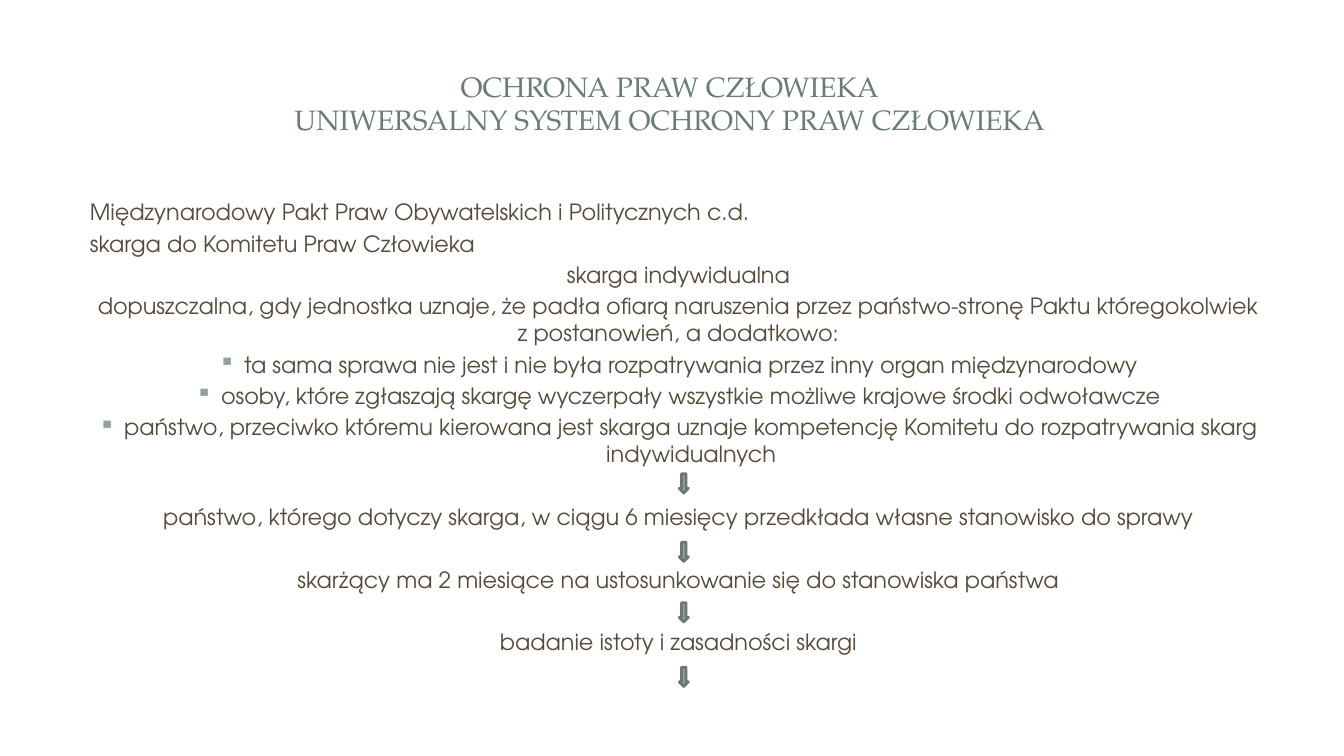
from dataclasses import dataclass

from lxml.etree import SubElement
from pptx import Presentation
from pptx.dml.color import RGBColor
from pptx.enum.shapes import MSO_SHAPE as Preset
from pptx.enum.text import MSO_ANCHOR as Anchor, PP_ALIGN as Align
from pptx.oxml.ns import qn
from pptx.util import Pt


@dataclass(frozen=True)
class Theme:
    heading: RGBColor = RGBColor.from_string("6B7D72")
    text: RGBColor = RGBColor.from_string("564B3C")
    accent: RGBColor = RGBColor.from_string("93A299")
    outline: RGBColor = RGBColor.from_string("6D7871")
    heading_font: str = "TeX Gyre Pagella"
    text_font: str = "TeX Gyre Adventor"
    heading_size: float = 20
    text_size: float = 16
    gap: float = 3.2  # a fifth of the text size
    step_gap: float = 25.6  # leaves a line free for an arrow


THEME = Theme()

HEADING = "OCHRONA PRAW CZŁOWIEKA\vUNIWERSALNY SYSTEM OCHRONY PRAW CZŁOWIEKA"
INTRO = [
    "Międzynarodowy Pakt Praw Obywatelskich i Politycznych c.d.",
    "skarga do Komitetu Praw Człowieka",
]
COMPLAINT = [
    "skarga indywidualna",
    "dopuszczalna, gdy jednostka uznaje, że padła ofiarą naruszenia przez "
    "państwo-stronę Paktu któregokolwiek z postanowień, a dodatkowo:",
]
CONDITIONS = [
    "ta sama sprawa nie jest i nie była rozpatrywania przez inny organ międzynarodowy",
    "osoby, które zgłaszają skargę wyczerpały wszystkie możliwe krajowe środki odwoławcze",
    "państwo, przeciwko któremu kierowana jest skarga uznaje kompetencję Komitetu "
    "do rozpatrywania skarg indywidualnych",
]
STEPS = [
    "państwo, którego dotyczy skarga, w ciągu 6 miesięcy przedkłada własne stanowisko do sprawy",
    "skarżący ma 2 miesiące na ustosunkowanie się do stanowiska państwa",
    "badanie istoty i zasadności skargi",
]
ARROW_OFFSETS = [200.2, 249.1, 292.3, 338.4]  # below the top of the procedure


def add_frame(slide, box):
    frame = slide.shapes.add_textbox(*map(Pt, box)).text_frame
    frame.word_wrap = True
    return frame


def style(paragraph, font_name, size, color):
    for run in paragraph.runs:
        run.font.name = font_name
        run.font.size = Pt(size)
        run.font.color.rgb = color


def indent(paragraph, left, first=0, bullet=None):
    props = paragraph._p.get_or_add_pPr()
    props.set("marL", str(Pt(left)))
    props.set("indent", str(Pt(first)))
    if bullet:
        color = SubElement(props, qn("a:buClr"))
        SubElement(color, qn("a:srgbClr"), val=str(THEME.accent))
        SubElement(props, qn("a:buChar"), char=bullet)


def add_heading(slide, box):
    frame = add_frame(slide, box)
    frame.vertical_anchor = Anchor.MIDDLE
    frame.text = HEADING
    lines = frame.paragraphs[0]
    lines.alignment = Align.CENTER
    style(lines, THEME.heading_font, THEME.heading_size, THEME.heading)


def add_procedure(slide, box):
    # Text: introduction, complaint, bulleted conditions, steps
    groups = [
        (INTRO, Align.LEFT, THEME.gap, None),
        (COMPLAINT, Align.CENTER, THEME.gap, None),
        (CONDITIONS, Align.CENTER, THEME.gap, "▪"),
        (STEPS, Align.CENTER, THEME.step_gap, None),
    ]
    frame = add_frame(slide, box)
    frame.text = "\n".join(line for group in groups for line in group[0])
    paragraphs = iter(frame.paragraphs)
    for lines, alignment, gap, bullet in groups:
        for _, paragraph in zip(lines, paragraphs):
            paragraph.alignment = alignment
            paragraph.space_before = Pt(gap)
            if bullet:
                indent(paragraph, 27, -18, bullet)
            else:
                indent(paragraph, 9)
            style(paragraph, THEME.text_font, THEME.text_size, THEME.text)
    frame.paragraphs[0].space_before = Pt(0)

    # Arrows leading from step to step
    left, top, width, _ = box
    for offset in ARROW_OFFSETS:
        arrow = slide.shapes.add_shape(
            Preset.DOWN_ARROW, Pt(left + width / 2 + 5), Pt(top + offset), Pt(6.5), Pt(13.7))
        arrow.shadow.inherit = False
        arrow.fill.solid()
        arrow.fill.fore_color.rgb = THEME.accent
        arrow.line.color.rgb = THEME.outline
        arrow.line.width = Pt(2)


def main():
    deck = Presentation()
    deck.slide_width, deck.slide_height = Pt(960), Pt(540)
    slide = deck.slides.add_slide(deck.slide_layouts[6])
    add_heading(slide, (44.6, 32.4, 867.6, 82))
    add_procedure(slide, (48.2, 138.2, 864, 378))
    deck.save("out.pptx")


if __name__ == "__main__":
    main()
